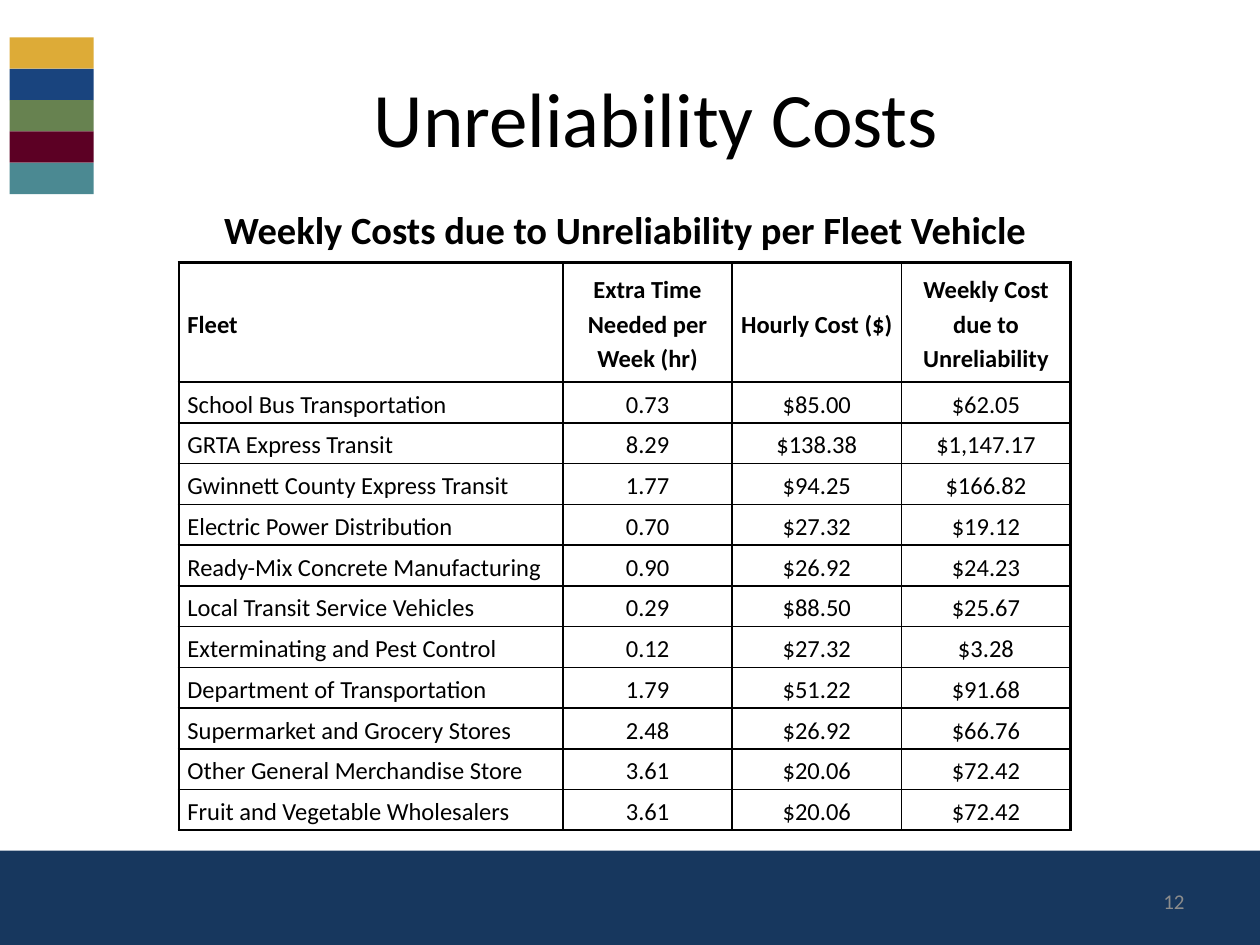
from lxml.etree import SubElement
from pptx import Presentation
from pptx.dml.color import RGBColor
from pptx.enum.shapes import MSO_SHAPE
from pptx.enum.text import MSO_ANCHOR, MSO_AUTO_SIZE, PP_ALIGN
from pptx.oxml.ns import qn
from pptx.util import Pt

TITLE = "Unreliability Costs"
CAPTION = "Weekly Costs due to Unreliability per Fleet Vehicle"
PAGE_NUMBER = "12"
FLEET_COSTS = [
    ("Fleet", "Extra Time Needed per Week (hr)", "Hourly Cost ($)",
     "Weekly Cost due to Unreliability"),
    ("School Bus Transportation", "0.73", "$85.00", "$62.05"),
    ("GRTA Express Transit", "8.29", "$138.38", "$1,147.17"),
    ("Gwinnett County Express Transit", "1.77", "$94.25", "$166.82"),
    ("Electric Power Distribution", "0.70", "$27.32", "$19.12"),
    ("Ready-Mix Concrete Manufacturing", "0.90", "$26.92", "$24.23"),
    ("Local Transit Service Vehicles", "0.29", "$88.50", "$25.67"),
    ("Exterminating and Pest Control", "0.12", "$27.32", "$3.28"),
    ("Department of Transportation", "1.79", "$51.22", "$91.68"),
    ("Supermarket and Grocery Stores", "2.48", "$26.92", "$66.76"),
    ("Other General Merchandise Store", "3.61", "$20.06", "$72.42"),
    ("Fruit and Vegetable Wholesalers", "3.61", "$20.06", "$72.42"),
]

FONT = "Calibri"
BLACK = RGBColor(0x00, 0x00, 0x00)
GRAY = RGBColor(0x8C, 0x8C, 0x8C)
NAVY = RGBColor(0x17, 0x37, 0x5E)
STRIPE_COLORS = [
    RGBColor(0xDD, 0xAB, 0x37), RGBColor(0x19, 0x44, 0x7E),
    RGBColor(0x67, 0x82, 0x50), RGBColor(0x5C, 0x00, 0x24),
    RGBColor(0x4B, 0x89, 0x92),
]

SLIDE_W, SLIDE_H = 720, 540
STRIPE_LEFT, STRIPE_TOP, STRIPE_W, STRIPE_H = 5.5, 21.4, 48, 17.9
FOOTER_TOP = 486
TABLE_LEFT, TABLE_TOP = 102.1, 150
COLUMN_WIDTHS = [219.6, 96.7, 96.7, 96.7]
HEADER_H, ROW_H = 68.4, 23.3
OUTER_LINE, INNER_LINE = 1.5, 1


def add_block(slide, left, top, width, height, color):
    block = slide.shapes.add_shape(
        MSO_SHAPE.RECTANGLE, Pt(left), Pt(top), Pt(width), Pt(height))
    block.shadow.inherit = False
    block.fill.solid()
    block.fill.fore_color.rgb = color
    block.line.fill.background()


def write(frame, text, size, align, color=BLACK, bold=False):
    frame.text = text
    frame.word_wrap = True
    paragraph = frame.paragraphs[0]
    paragraph.alignment = align
    font = paragraph.runs[0].font
    font.name, font.size, font.bold = FONT, Pt(size), bold
    font.color.rgb = color
    return paragraph


def add_label(slide, left, top, width, height):
    label = slide.shapes.add_textbox(Pt(left), Pt(top), Pt(width), Pt(height))
    return label.text_frame


def set_borders(cell, widths):
    """Draw solid black borders; widths maps lnL, lnR, lnT, lnB to points."""
    properties = cell._tc.get_or_add_tcPr()
    for side, width in widths.items():
        line = SubElement(properties, qn(f"a:{side}"), w=str(Pt(width)))
        fill = SubElement(line, qn("a:solidFill"))
        SubElement(fill, qn("a:srgbClr"), val=str(BLACK))


def add_cost_table(slide):
    last_column = len(COLUMN_WIDTHS) - 1
    row_heights = [HEADER_H] + [ROW_H] * (len(FLEET_COSTS) - 1)
    table = slide.shapes.add_table(
        len(row_heights), len(COLUMN_WIDTHS), Pt(TABLE_LEFT), Pt(TABLE_TOP),
        Pt(sum(COLUMN_WIDTHS)), Pt(sum(row_heights))).table
    table.horz_banding = False
    for column, width in zip(table.columns, COLUMN_WIDTHS):
        column.width = Pt(width)
    for row, height in zip(table.rows, row_heights):
        row.height = Pt(height)

    for r, record in enumerate(FLEET_COSTS):
        for c, text in enumerate(record):
            cell = table.cell(r, c)
            cell.margin_left = cell.margin_right = Pt(5)
            cell.margin_top = cell.margin_bottom = 0
            cell.vertical_anchor = MSO_ANCHOR.MIDDLE
            align = PP_ALIGN.CENTER if c else PP_ALIGN.LEFT
            write(cell.text_frame, text, 14, align, bold=r == 0).line_spacing = 1.15
            set_borders(cell, {
                "lnL": INNER_LINE if c else OUTER_LINE,
                "lnR": OUTER_LINE if c == last_column else INNER_LINE,
                "lnT": INNER_LINE if r else OUTER_LINE,
                "lnB": INNER_LINE,
            })
            cell.fill.background()


def main():
    deck = Presentation()
    deck.slide_width, deck.slide_height = Pt(SLIDE_W), Pt(SLIDE_H)
    slide = deck.slides.add_slide(deck.slide_layouts[5])

    for i, color in enumerate(STRIPE_COLORS):
        add_block(slide, STRIPE_LEFT, STRIPE_TOP + i * STRIPE_H,
                  STRIPE_W, STRIPE_H, color)
    add_block(slide, 0, FOOTER_TOP, SLIDE_W, SLIDE_H - FOOTER_TOP, NAVY)

    title = slide.shapes.title
    title.left, title.top = Pt(66), Pt(21.6)
    title.width, title.height = Pt(618), Pt(90)
    title.text_frame.vertical_anchor = MSO_ANCHOR.MIDDLE
    write(title.text_frame, TITLE, 44, PP_ALIGN.CENTER)

    page_number = add_label(slide, 516, 500.5, 168, 28.75)
    page_number.vertical_anchor = MSO_ANCHOR.MIDDLE
    write(page_number, PAGE_NUMBER, 12, PP_ALIGN.RIGHT, GRAY)

    caption = add_label(slide, 0, 114, 714.5, 34)
    caption.auto_size = MSO_AUTO_SIZE.SHAPE_TO_FIT_TEXT
    write(caption, CAPTION, 22, PP_ALIGN.CENTER, bold=True)

    add_cost_table(slide)
    deck.save("out.pptx")


if __name__ == "__main__":
    main()
